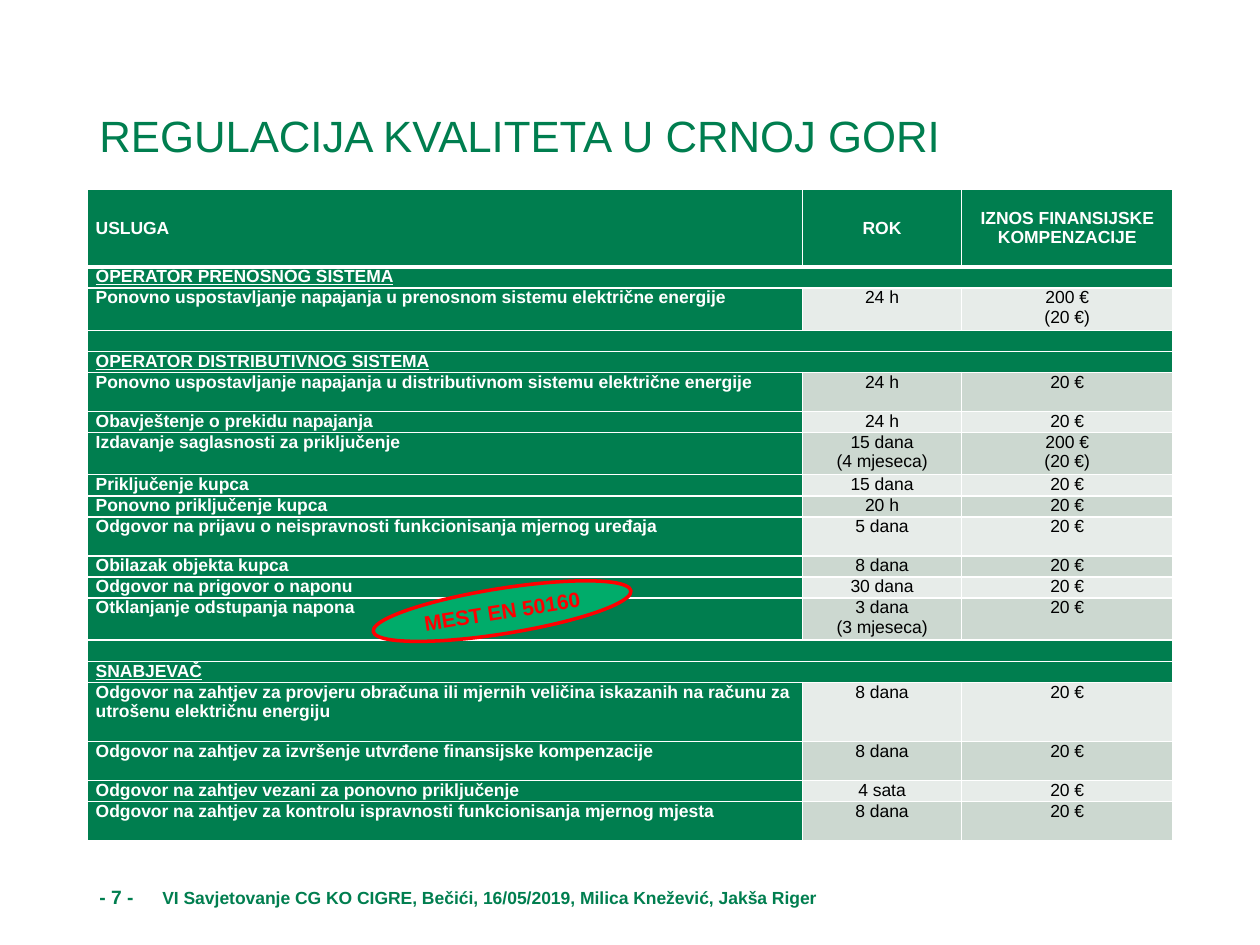
from typing import NamedTuple

import pptx
import pptx.dml.color
import pptx.enum.shapes
import pptx.enum.text
import pptx.oxml.ns
import pptx.util
from lxml import etree
from pptx.util import Inches

ALIGN = pptx.enum.text.PP_ALIGN
ANCHOR = pptx.enum.text.MSO_ANCHOR
GREEN, WHITE, BLACK, RED = "007E4F", "FFFFFF", "000000", "FF0000"
BANDS = ("E7ECE9", "CCD8D0")
LEFT, WIDTH = 0.69, 8.62
HEADER_HEIGHT = 0.62
COLUMN_WIDTHS = (5.68, 1.26, 1.68)
LINE_HEIGHTS = {1: 0.16, 2: 0.31, 3: 0.47}


class Section(NamedTuple):
    name: str


class Service(NamedTuple):
    name: str
    deadline: str
    amount: str = "20 €"
    lines: int = 1


HEADERS = ("USLUGA", "ROK", "IZNOS FINANSIJSKE KOMPENZACIJE")
ROWS = (
    Section("OPERATOR PRENOSNOG SISTEMA"),
    Service("Ponovno uspostavljanje napajanja u prenosnom sistemu električne energije",
            "24 h", "200 €\n(20 €)", lines=2),
    Section(""),
    Section("OPERATOR DISTRIBUTIVNOG SISTEMA"),
    Service("Ponovno uspostavljanje napajanja u distributivnom sistemu električne energije",
            "24 h", lines=2),
    Service("Obavještenje o prekidu napajanja", "24 h"),
    Service("Izdavanje saglasnosti za priključenje", "15 dana\n(4 mjeseca)",
            "200 €\n(20 €)", lines=2),
    Service("Priključenje kupca", "15 dana"),
    Service("Ponovno priključenje kupca", "20 h"),
    Service("Odgovor na prijavu o neispravnosti funkcionisanja mjernog uređaja",
            "5 dana", lines=2),
    Service("Obilazak objekta kupca", "8 dana"),
    Service("Odgovor na prigovor o naponu", "30 dana"),
    Service("Otklanjanje odstupanja napona", "3 dana\n(3 mjeseca)", lines=2),
    Section(""),
    Section("SNABJEVAČ"),
    Service("Odgovor na zahtjev za provjeru obračuna ili mjernih veličina iskazanih "
            "na računu za utrošenu električnu energiju", "8 dana", lines=3),
    Service("Odgovor na zahtjev za izvršenje utvrđene finansijske kompenzacije",
            "8 dana", lines=2),
    Service("Odgovor na zahtjev vezani za ponovno priključenje", "4 sata"),
    Service("Odgovor na zahtjev za kontrolu ispravnosti funkcionisanja mjernog mjesta",
            "8 dana", lines=2),
)


def rgb(color: str) -> pptx.dml.color.RGBColor:
    return pptx.dml.color.RGBColor.from_string(color)


def add_run(p, text: str, *, size: float = 10, color: str = GREEN,
            bold: bool = False, underline: bool = False) -> None:
    r = p.add_run()
    r.text = text
    r.font.name = "Arial"
    r.font.size = pptx.util.Pt(size)
    r.font.bold = bold
    r.font.underline = underline
    r.font.color.rgb = rgb(color)


def write(tf, text: str, *, align=ALIGN.LEFT, **style) -> None:
    """Write one paragraph per line; an empty text keeps its font size."""
    for i, line in enumerate(text.split("\n")):
        p = tf.add_paragraph() if i else tf.paragraphs[0]
        p.alignment = align
        if line:
            add_run(p, line, **style)
        else:
            end = etree.SubElement(p._p, pptx.oxml.ns.qn("a:endParaRPr"))
            end.set("sz", "1000")


def add_border(cell, side: str, points: float) -> None:
    qn = pptx.oxml.ns.qn
    ln = etree.SubElement(cell._tc.get_or_add_tcPr(), qn(f"a:ln{side}"))
    ln.set("w", str(pptx.util.Pt(points)))
    fill = etree.SubElement(ln, qn("a:solidFill"))
    etree.SubElement(fill, qn("a:srgbClr")).set("val", WHITE)


def format_cell(cell, row: int, fill: str) -> None:
    cell.margin_left = cell.margin_right = Inches(0.07)
    cell.margin_top = cell.margin_bottom = 0
    cell.vertical_anchor = ANCHOR.TOP if row else ANCHOR.MIDDLE
    for side in "LRTB":
        thick = (row, side) in ((0, "B"), (1, "T"))
        add_border(cell, side, 3 if thick else 1)
    cell.fill.solid()
    cell.fill.fore_color.rgb = rgb(fill)


def add_service_table(s) -> None:
    heights = [HEADER_HEIGHT] + [LINE_HEIGHTS[getattr(row, "lines", 1)] for row in ROWS]
    table = s.shapes.add_table(len(heights), len(COLUMN_WIDTHS), Inches(LEFT), Inches(1.5),
                               Inches(WIDTH), Inches(sum(heights))).table
    for column, width in zip(table.columns, COLUMN_WIDTHS):
        column.width = Inches(width)
    for row, height in zip(table.rows, heights):
        row.height = Inches(height)

    for i, row in enumerate((HEADERS, *ROWS)):
        is_service = isinstance(row, Service)
        for j in range(len(COLUMN_WIDTHS)):
            is_value = is_service and j > 0
            cell = table.cell(i, j)
            format_cell(cell, i, BANDS[i % 2] if is_value else GREEN)
            if j < len(row):
                write(cell.text_frame, row[j], align=ALIGN.CENTER if j else ALIGN.LEFT,
                      color=BLACK if is_value else WHITE, bold=not is_value,
                      underline=isinstance(row, Section))
        if isinstance(row, Section):
            table.cell(i, 0).merge(table.cell(i, 2))


def add_text_box(s, top: float, height: float):
    tf = s.shapes.add_textbox(Inches(LEFT), Inches(top), Inches(WIDTH), Inches(height)).text_frame
    tf.word_wrap = True
    return tf


def add_standard_badge(s) -> None:
    sp = s.shapes.add_shape(pptx.enum.shapes.MSO_SHAPE.OVAL, Inches(2.95), Inches(4.67),
                            Inches(2.07), Inches(0.36))
    sp.rotation = -9
    sp.shadow.inherit = False
    sp.fill.solid()
    sp.fill.fore_color.rgb = rgb("00AC6A")
    sp.line.color.rgb = rgb(RED)
    sp.line.width = pptx.util.Pt(2)
    tf = sp.text_frame
    tf.word_wrap = False
    tf.vertical_anchor = ANCHOR.MIDDLE
    write(tf, "MEST EN 50160", align=ALIGN.CENTER, size=12, color=RED, bold=True)


def main() -> None:
    prs = pptx.Presentation()
    prs.slide_width, prs.slide_height = Inches(10), Inches(7.5)
    s = prs.slides.add_slide(prs.slide_layouts[6])

    title = add_text_box(s, 0.69, 0.82)
    title.vertical_anchor = ANCHOR.MIDDLE
    write(title, "REGULACIJA KVALITETA U CRNOJ GORI", size=25)
    title.paragraphs[0].line_spacing = 0.9

    add_service_table(s)

    footer = add_text_box(s, 6.98, 0.29)
    write(footer, "- 7 -", size=11, bold=True)
    add_run(footer.paragraphs[0],
            "\tVI Savjetovanje CG KO CIGRE, Bečići, 16/05/2019, Milica Knežević, Jakša Riger",
            bold=True)

    add_standard_badge(s)
    prs.save("out.pptx")


if __name__ == "__main__":
    main()
